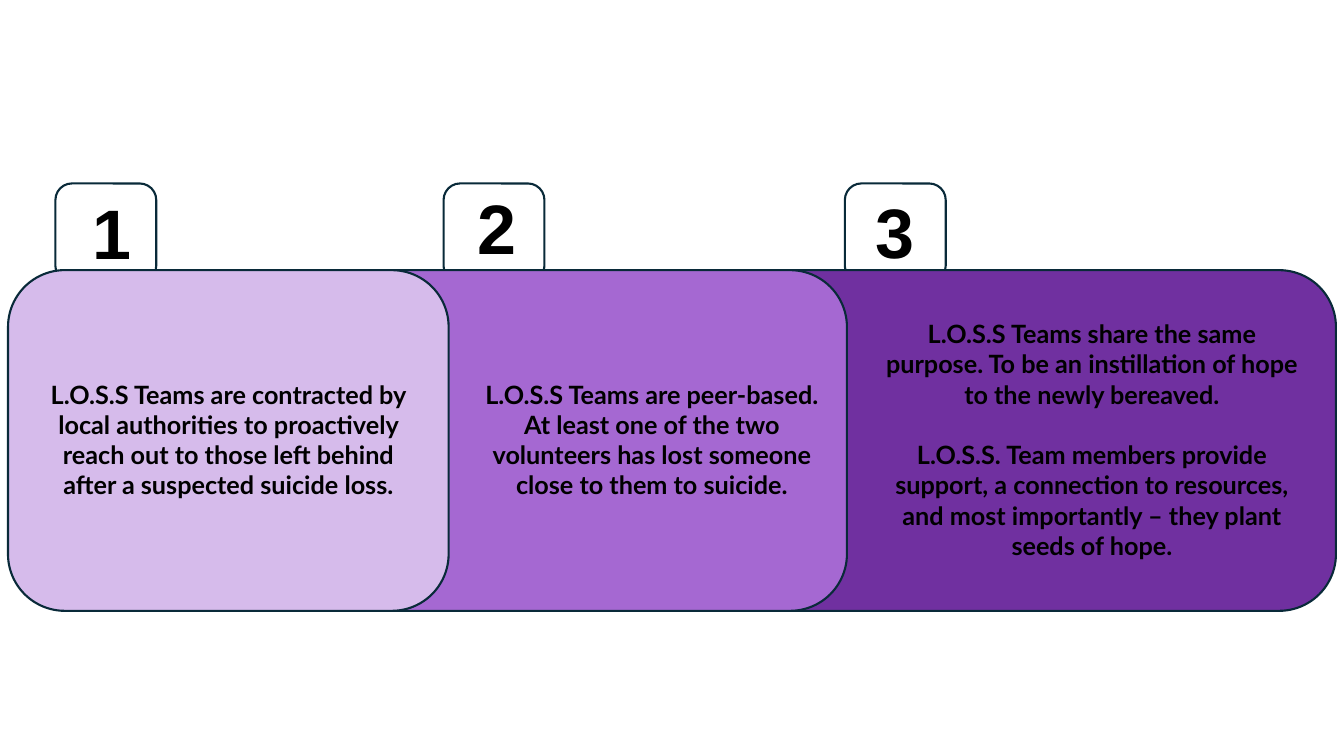
"""Build a slide with three overlapping numbered panels about L.O.S.S Teams."""
from dataclasses import dataclass

from pptx import Presentation
from pptx.dml.color import RGBColor
from pptx.enum import shapes, text
from pptx.slide import Slide
from pptx.util import Inches, Pt


@dataclass(frozen=True)
class Theme:
    outline: str = "092A39"
    ink: str = "000000"
    tab_fill: str = "FFFFFF"
    outline_width: float = 1.5
    body_font: str = "Lato"
    body_size: float = 18
    number_font: str = "Arial"
    number_size: float = 50
    paragraph_gap: float = 21.6


@dataclass(frozen=True)
class Box:
    left: float
    top: float
    width: float
    height: float

    def lengths(self) -> list[Inches]:
        return [Inches(n) for n in (self.left, self.top, self.width, self.height)]


@dataclass(frozen=True)
class Panel:
    number: str
    fill: str
    tab: Box
    card: Box
    number_box: Box
    body_box: Box
    body: tuple[str, ...]


THEME = Theme()
TAB_TOP, TAB_WIDTH, TAB_HEIGHT = 1.82, 1, 0.98
CARD_TOP, CARD_HEIGHT = 2.68, 3.38

PANELS = (
    Panel("1", "D6BBEB", Box(0.55, TAB_TOP, TAB_WIDTH, TAB_HEIGHT),
          Box(0.08, CARD_TOP, 4.37, CARD_HEIGHT),
          Box(0.82, 1.83, 0.47, 0.94), Box(0.26, 3.71, 4.01, 1.31),
          ("L.O.S.S Teams are contracted by local authorities to proactively "
           "reach out to those left behind after a suspected suicide loss.",)),
    Panel("2", "A568D2", Box(4.4, TAB_TOP, TAB_WIDTH, TAB_HEIGHT),
          Box(1.82, CARD_TOP, 6.58, CARD_HEIGHT),
          Box(4.64, 1.78, 0.41, 0.94), Box(4.64, 3.71, 3.65, 1.31),
          ("L.O.S.S Teams are peer-based. At least one of the two volunteers "
           "has lost someone close to them to suicide.",)),
    Panel("3", "7030A0", Box(8.38, TAB_TOP, TAB_WIDTH, TAB_HEIGHT),
          Box(3.7, CARD_TOP, 9.55, CARD_HEIGHT),
          Box(8.59, 1.82, 0.47, 0.94), Box(8.68, 3.11, 4.3, 2.52),
          ("L.O.S.S Teams share the same purpose. To be an instillation of "
           "hope to the newly bereaved.",
           "L.O.S.S. Team members provide support, a connection to resources, "
           "and most importantly – they plant seeds of hope.")),
)


def add_rounded(slide: Slide, box: Box, fill: str) -> None:
    rounded = slide.shapes.add_shape(
        shapes.MSO_SHAPE.ROUNDED_RECTANGLE, *box.lengths())
    rounded.shadow.inherit = False
    rounded.fill.solid()
    rounded.fill.fore_color.rgb = RGBColor.from_string(fill)
    rounded.line.color.rgb = RGBColor.from_string(THEME.outline)
    rounded.line.width = Pt(THEME.outline_width)


def add_text(slide: Slide, box: Box, paragraphs: tuple[str, ...], font: str,
             size: float, alignment: text.PP_ALIGN) -> None:
    frame = slide.shapes.add_textbox(*box.lengths()).text_frame
    frame.word_wrap = True
    frame.auto_size = text.MSO_AUTO_SIZE.SHAPE_TO_FIT_TEXT
    for index, wording in enumerate(paragraphs):
        paragraph = frame.add_paragraph() if index else frame.paragraphs[0]
        paragraph.text = wording
        paragraph.alignment = alignment
        if index:
            paragraph.space_before = Pt(THEME.paragraph_gap)
        paragraph.font.name = font
        paragraph.font.size = Pt(size)
        paragraph.font.bold = True
        paragraph.font.color.rgb = RGBColor.from_string(THEME.ink)


def main() -> None:
    deck = Presentation()
    deck.slide_width, deck.slide_height = Inches(13.33), Inches(7.5)
    slide = deck.slides.add_slide(deck.slide_layouts[6])
    for panel in reversed(PANELS):
        add_rounded(slide, panel.tab, THEME.tab_fill)
    for panel in reversed(PANELS):
        add_rounded(slide, panel.card, panel.fill)
    for panel in PANELS:
        add_text(slide, panel.body_box, panel.body, THEME.body_font,
                 THEME.body_size, text.PP_ALIGN.CENTER)
    for panel in PANELS:
        add_text(slide, panel.number_box, (panel.number,), THEME.number_font,
                 THEME.number_size, text.PP_ALIGN.LEFT)
    deck.save("out.pptx")


if __name__ == "__main__":
    main()
